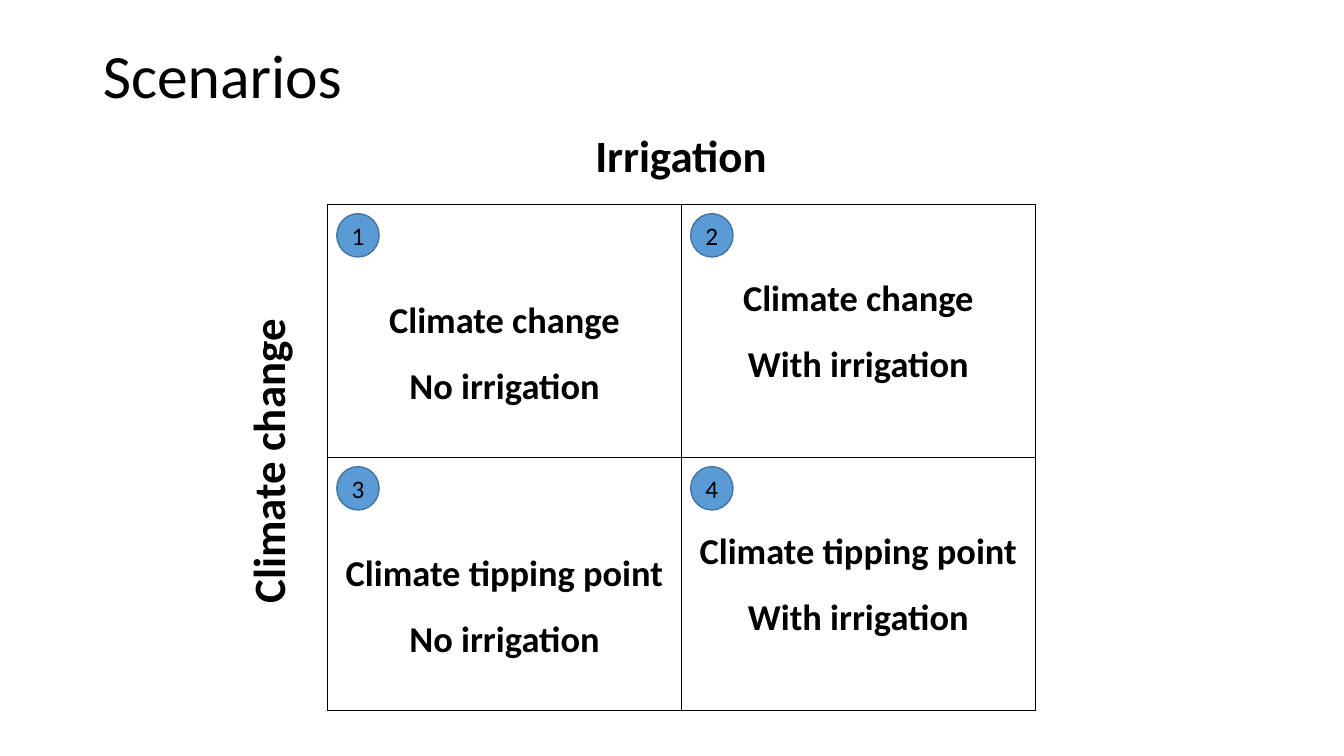
from dataclasses import dataclass

from lxml.etree import SubElement
from pptx import Presentation
from pptx.dml.color import RGBColor
from pptx.enum.shapes import MSO_SHAPE
from pptx.enum.text import MSO_ANCHOR, MSO_AUTO_SIZE, PP_ALIGN
from pptx.oxml.ns import qn
from pptx.util import Inches, Pt


@dataclass(frozen=True)
class Theme:
    font: str = "Calibri"
    black: RGBColor = RGBColor(0x00, 0x00, 0x00)
    badge_fill: RGBColor = RGBColor(0x5B, 0x9B, 0xD5)
    badge_line: RGBColor = RGBColor(0x43, 0x73, 0x9E)
    title_size: int = 44
    axis_size: int = 32
    cell_size: int = 26
    badge_size: int = 18


theme = Theme()


def write(paragraph, text, size, bold=False, alignment=PP_ALIGN.CENTER):
    paragraph.alignment = alignment
    run = paragraph.add_run()
    run.text = text
    run.font.name = theme.font
    run.font.size = Pt(size)
    run.font.bold = bold
    run.font.color.rgb = theme.black


def outline_cell(cell):
    properties = cell._tc.get_or_add_tcPr()
    for side in ("a:lnL", "a:lnR", "a:lnT", "a:lnB"):
        line = SubElement(properties, qn(side), w=str(Pt(1)))
        fill = SubElement(line, qn("a:solidFill"))
        SubElement(fill, qn("a:srgbClr"), val=str(theme.black))


presentation = Presentation()
presentation.slide_width = Inches(13.33)
presentation.slide_height = Inches(7.5)
slide = presentation.slides.add_slide(presentation.slide_layouts[5])

# Title
title = slide.shapes.title
title.left, title.top = Inches(0.92), Inches(0.4)
title.width, title.height = Inches(11.5), Inches(1.45)
title.text_frame.auto_size = MSO_AUTO_SIZE.NONE
title.text_frame.vertical_anchor = MSO_ANCHOR.TOP
title.text_frame.paragraphs[0].line_spacing = 0.9
write(title.text_frame.paragraphs[0], "Scenarios", theme.title_size,
      alignment=PP_ALIGN.LEFT)

# Scenario matrix
table_left, table_top = 3.25, 2.03
column_width, row_height = 3.51, 2.51
scenarios = [
    [("Climate change", "No irrigation"), ("Climate change", "With irrigation")],
    [("Climate tipping point", "No irrigation"),
     ("Climate tipping point", "With irrigation")],
]
column_text_offsets = (0.71, 0.49)
table = slide.shapes.add_table(
    2, 2, Inches(table_left), Inches(table_top),
    Inches(2 * column_width), Inches(2 * row_height)).table
table.first_row = False
table.horz_banding = False

for row, scenario_row in enumerate(scenarios):
    for column, scenario_lines in enumerate(scenario_row):
        cell = table.cell(row, column)
        outline_cell(cell)
        cell.fill.background()
        cell.margin_top = Inches(column_text_offsets[column])
        for index, text in enumerate(scenario_lines):
            frame = cell.text_frame
            paragraph = frame.add_paragraph() if index else frame.paragraphs[0]
            paragraph.line_spacing = 1.5
            write(paragraph, text, theme.cell_size, bold=True)

        badge = slide.shapes.add_shape(
            MSO_SHAPE.OVAL,
            Inches(table_left + 0.09 + column * column_width),
            Inches(table_top + 0.09 + row * row_height),
            Inches(0.42), Inches(0.43))
        badge.shadow.inherit = False
        badge.fill.solid()
        badge.fill.fore_color.rgb = theme.badge_fill
        badge.line.color.rgb = theme.badge_line
        badge.line.width = Pt(1)
        frame = badge.text_frame
        frame.margin_left = frame.margin_right = 0
        frame.margin_top = frame.margin_bottom = 0
        frame.word_wrap = False
        frame.vertical_anchor = MSO_ANCHOR.MIDDLE
        write(frame.paragraphs[0], str(2 * row + column + 1), theme.badge_size)

# Axis labels
axis_labels = [
    ("Climate change", 1.12, 4.23, 3.07, 270, PP_ALIGN.LEFT),
    ("Irrigation", 5.62, 1.22, 2.27, 0, PP_ALIGN.CENTER),
]
for text, left, top, width, rotation, alignment in axis_labels:
    label = slide.shapes.add_textbox(
        Inches(left), Inches(top), Inches(width), Inches(0.64))
    label.rotation = rotation
    label.text_frame.word_wrap = True
    write(label.text_frame.paragraphs[0], text, theme.axis_size,
          bold=True, alignment=alignment)

presentation.save("out.pptx")
